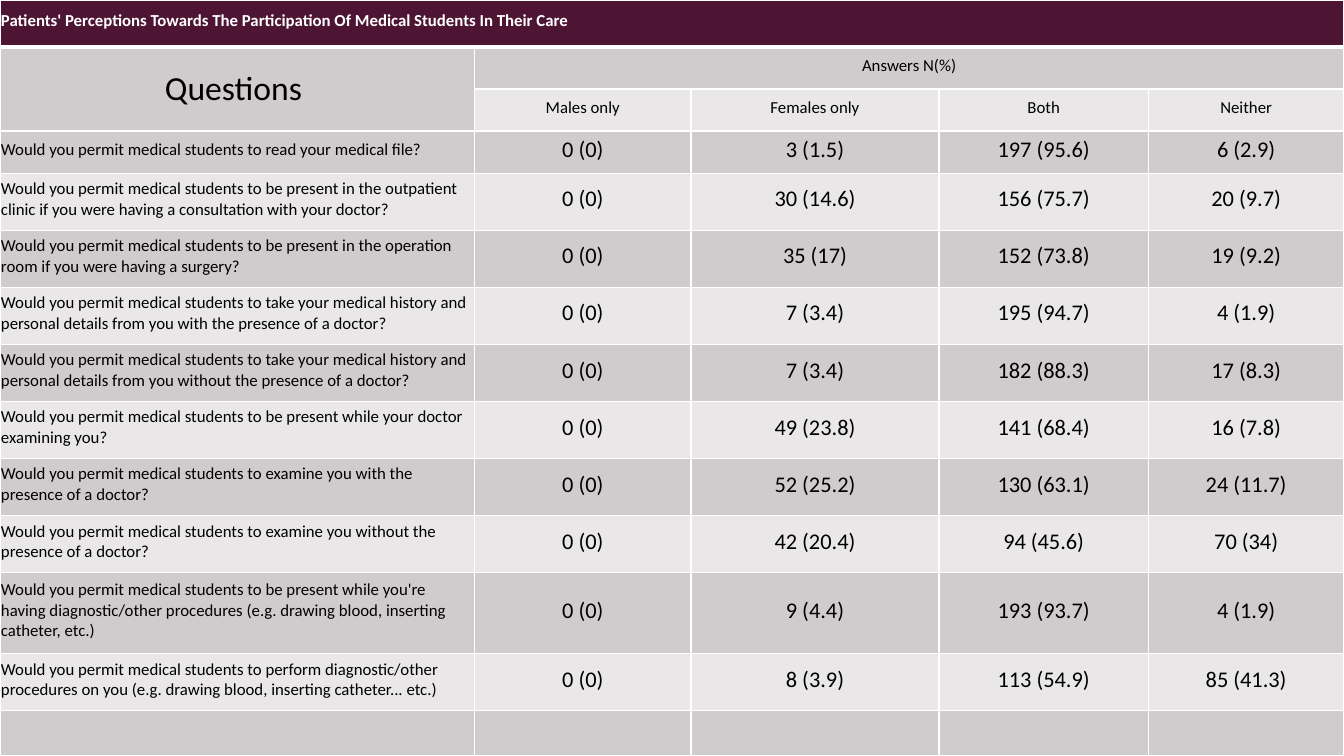
from dataclasses import dataclass

from lxml.etree import SubElement
from pptx import Presentation
from pptx.dml.color import RGBColor as Rgb
from pptx.enum.text import MSO_ANCHOR as Anchor, PP_ALIGN as Align
from pptx.oxml.ns import qn
from pptx.util import Inches, Pt


@dataclass(frozen=True)
class Theme:
    font: str = "Calibri"
    white: str = "FFFFFF"
    black: str = "000000"
    plum: str = "4D1434"
    dark: str = "D0CCCE"
    light: str = "E9E7E8"
    small: int = 12
    value: int = 16
    large: int = 24
    thin: int = 1
    thick: int = 3


COLS = [4.71, 2.15, 2.46, 2.08, 1.94]
ROWS = [0.47] + [0.42] * 3 + [0.57] * 7 + [0.81, 0.57, 0.45]
TITLE = ("Patients' Perceptions Towards The Participation "
         "Of Medical Students In Their Care")
GROUPS = ["Males only", "Females only", "Both", "Neither"]
ASK = "Would you permit medical students to "
SURVEY = [
    ("read your medical file?",
     "0 (0)", "3 (1.5)", "197 (95.6)", "6 (2.9)"),
    ("be present in the outpatient clinic if you were having a consultation "
     "with your doctor?",
     "0 (0)", "30 (14.6)", "156 (75.7)", "20 (9.7)"),
    ("be present in the operation room if you were having a surgery?",
     "0 (0)", "35 (17)", "152 (73.8)", "19 (9.2)"),
    ("take your medical history and personal details from you "
     "with the presence of a doctor?",
     "0 (0)", "7 (3.4)", "195 (94.7)", "4 (1.9)"),
    ("take your medical history and personal details from you "
     "without the presence of a doctor?",
     "0 (0)", "7 (3.4)", "182 (88.3)", "17 (8.3)"),
    ("be present while your doctor examining you?",
     "0 (0)", "49 (23.8)", "141 (68.4)", "16 (7.8)"),
    ("examine you with the presence of a doctor?",
     "0 (0)", "52 (25.2)", "130 (63.1)", "24 (11.7)"),
    ("examine you without the presence of a doctor?",
     "0 (0)", "42 (20.4)", "94 (45.6)", "70 (34)"),
    ("be present while you're having diagnostic/other procedures "
     "(e.g. drawing blood, inserting catheter, etc.)",
     "0 (0)", "9 (4.4)", "193 (93.7)", "4 (1.9)"),
    ("perform diagnostic/other procedures on you "
     "(e.g. drawing blood, inserting catheter... etc.)",
     "0 (0)", "8 (3.9)", "113 (54.9)", "85 (41.3)"),
]


class Deck:
    def __init__(self, theme):
        self.theme = theme
        self.prs = Presentation()
        self.prs.slide_width = Inches(13.33)
        self.prs.slide_height = Inches(7.5)
        self.slide = self.prs.slides.add_slide(self.prs.slide_layouts[6])

    def grid(self, cols, rows):
        """Fill the slide with a table whose tracks share it by weight."""
        wide, high = self.prs.slide_width, self.prs.slide_height
        frame = self.slide.shapes.add_table(
            len(rows), len(cols), 0, 0, wide, high)
        table = frame.table
        for col, part in zip(table.columns, cols):
            col.width = int(wide * part / sum(cols))
        for row, part in zip(table.rows, rows):
            row.height = int(high * part / sum(rows))
        for r in range(len(rows)):
            for c in range(len(cols)):
                self.paint(table.cell(r, c), r)
        return table

    def paint(self, cell, row):
        """Give a cell its borders, banded fill and margins."""
        look = self.theme
        top = look.thick if row == 1 else look.thin
        base = look.thick if row == 0 else look.thin
        sides = {"L": look.thin, "R": look.thin, "T": top, "B": base}
        props = cell._tc.get_or_add_tcPr()
        for side, size in sides.items():
            line = SubElement(props, qn(f"a:ln{side}"), w=str(Pt(size)))
            fill = SubElement(line, qn("a:solidFill"))
            SubElement(fill, qn("a:srgbClr"), val=look.white)
        band = look.dark if row % 2 else look.light
        cell.fill.solid()
        cell.fill.fore_color.rgb = Rgb.from_string(band if row else look.plum)
        cell.margin_left = cell.margin_right = cell.margin_top = Inches(0.01)
        cell.margin_bottom = Inches(0.06)
        cell.vertical_anchor = Anchor.MIDDLE

    def label(self, cell, text, size, align=Align.CENTER, color=None,
              bold=False):
        cell.text = text
        para = cell.text_frame.paragraphs[0]
        para.alignment = align
        font = para.font
        font.name, font.size, font.bold = self.theme.font, Pt(size), bold
        font.color.rgb = Rgb.from_string(color or self.theme.black)
        return para


def main():
    look = Theme()
    deck = Deck(look)
    table = deck.grid(COLS, ROWS)
    cell = table.cell

    cell(0, 0).merge(cell(0, 4))
    deck.label(cell(0, 0), TITLE, look.small, Align.LEFT, look.white, True)

    cell(1, 0).merge(cell(2, 0))
    head = deck.label(cell(1, 0), "Questions ", look.large)
    head.line_spacing = 1.5
    cell(1, 0).vertical_anchor = Anchor.TOP

    cell(1, 1).merge(cell(1, 4))
    deck.label(cell(1, 1), "Answers N(%)", look.small)
    for c, group in enumerate(GROUPS, 1):
        deck.label(cell(2, c), group, look.small)

    for r, (ask, *counts) in enumerate(SURVEY, 3):
        deck.label(cell(r, 0), ASK + ask, look.small, Align.LEFT)
        for c, count in enumerate(counts, 1):
            deck.label(cell(r, c), count, look.value)

    deck.prs.save("out.pptx")


if __name__ == "__main__":
    main()
